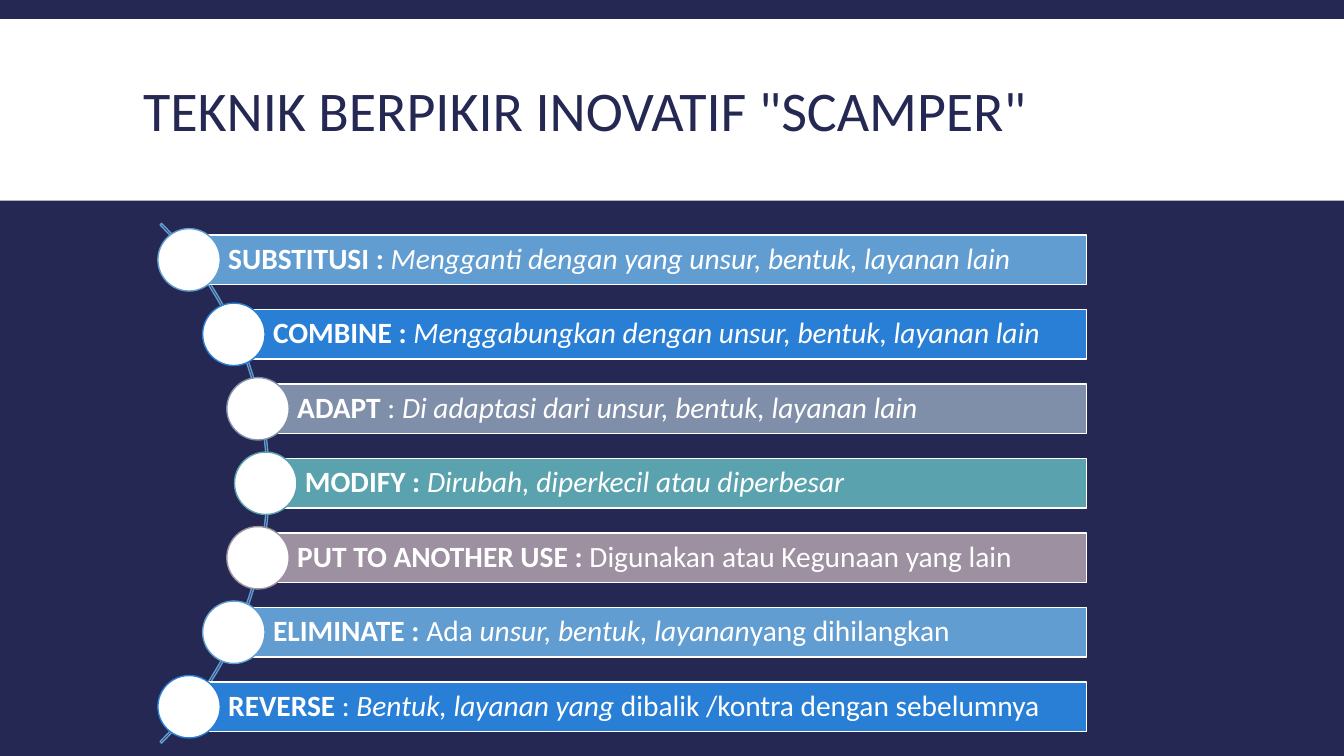
"""Build the slide on the seven SCAMPER techniques for innovative thinking."""
from dataclasses import dataclass
from math import sqrt

from pptx import Presentation
from pptx.dml.color import RGBColor
from pptx.enum.shapes import MSO_SHAPE
from pptx.enum.text import MSO_ANCHOR, MSO_AUTO_SIZE, PP_ALIGN
from pptx.util import Pt


@dataclass(frozen=True)
class Theme:
    navy: str = "242852"
    white: str = "FFFFFF"
    accents: tuple = ("629DD1", "297FD5", "7F8FA9", "5AA2AE", "9D90A0")
    font: str = "Calibri"
    title_size: int = 40
    body_size: int = 21


theme = Theme()


def add_outlined(kind, box, fill, line):
    shape = slide.shapes.add_shape(kind, *map(Pt, box))
    shape.shadow.inherit = False
    if fill:
        shape.fill.solid()
        shape.fill.fore_color.rgb = RGBColor.from_string(fill)
    else:
        shape.fill.background()
    shape.line.color.rgb = RGBColor.from_string(line)
    shape.line.width = Pt(1)
    return shape


def write_line(shape, runs, size, color, spacing, margins):
    frame_format = dict(
        zip(("margin_left", "margin_top", "margin_right", "margin_bottom"), map(Pt, margins)),
        auto_size=MSO_AUTO_SIZE.NONE, word_wrap=True, vertical_anchor=MSO_ANCHOR.MIDDLE)
    for name, value in frame_format.items():
        setattr(shape.text_frame, name, value)
    paragraph = shape.text_frame.paragraphs[0]
    paragraph.alignment = PP_ALIGN.LEFT
    paragraph.line_spacing = spacing
    for text, style in runs:
        run = paragraph.add_run()
        run.text = text
        font_format = {"name": theme.font, "size": Pt(size),
                       "bold": style == "bold", "italic": style == "italic"}
        for name, value in font_format.items():
            setattr(run.font, name, value)
        run.font.color.rgb = RGBColor.from_string(color)


presentation = Presentation()
presentation.slide_width, presentation.slide_height = Pt(960), Pt(540)
slide = presentation.slides.add_slide(presentation.slide_layouts[5])
slide.background.fill.solid()
slide.background.fill.fore_color.rgb = RGBColor.from_string(theme.navy)

title = slide.shapes.title
title_place = {"left": 95, "top": 22.3, "width": 770.4, "height": 118.8}
for name, value in title_place.items():
    setattr(title, name, Pt(value))
write_line(title, [('TEKNIK BERPIKIR INOVATIF "SCAMPER"', "plain")],
           theme.title_size, theme.navy, 0.85, (7.2, 3.6, 7.2, 3.6))

band = add_outlined(MSO_SHAPE.RECTANGLE, (0, 13.7, 960, 129.6), theme.white, theme.white)
band.line.fill.background()
title.element.addprevious(band.element)

techniques = [
    [("SUBSTITUSI : ", "bold"),
     ("Mengganti dengan yang unsur, bentuk, layanan lain", "italic")],
    [("COMBINE : ", "bold"),
     ("Menggabungkan dengan unsur, bentuk, layanan lain", "italic")],
    [("ADAPT ", "bold"), (": ", "plain"),
     ("Di adaptasi dari unsur, bentuk, layanan lain", "italic")],
    [("MODIFY : ", "bold"), ("Dirubah, diperkecil atau diperbesar", "italic")],
    [("PUT TO ANOTHER USE :", "bold"), (" Digunakan atau Kegunaan yang lain", "plain")],
    [("ELIMINATE : ", "bold"), ("Ada ", "plain"),
     ("unsur, bentuk, layanan", "italic"), ("yang dihilangkan", "plain")],
    [("REVERSE", "bold"), (" : ", "plain"), ("Bentuk, layanan yang ", "italic"),
     ("dibalik /kontra dengan sebelumnya", "plain")],
]

center_x, center_y = -70.2, 345.2
arc_size, bead_radius = 525, 260
pitch, bar_height, bar_right, bead_size = 53.2, 35.4, 776.2, 44.6

arc = add_outlined(MSO_SHAPE.BLOCK_ARC,
                   (center_x - arc_size / 2, center_y - arc_size / 2, arc_size, arc_size),
                   None, theme.accents[0])
for index, value in enumerate((189, 27, 0.003)):
    arc.adjustments[index] = value

for index, runs in enumerate(techniques):
    offset = (index - len(techniques) // 2) * pitch
    x = center_x + sqrt(bead_radius ** 2 - offset ** 2)
    y = center_y + offset
    accent = theme.accents[index % len(theme.accents)]
    bar = add_outlined(MSO_SHAPE.RECTANGLE,
                       (x, y - bar_height / 2, bar_right - x, bar_height), accent, theme.white)
    write_line(bar, runs, theme.body_size, theme.white, 0.9, (28, 4.2, 4.2, 4.2))
    add_outlined(MSO_SHAPE.OVAL,
                 (x - bead_size / 2, y - bead_size / 2, bead_size, bead_size),
                 theme.white, accent)

presentation.save("out.pptx")
